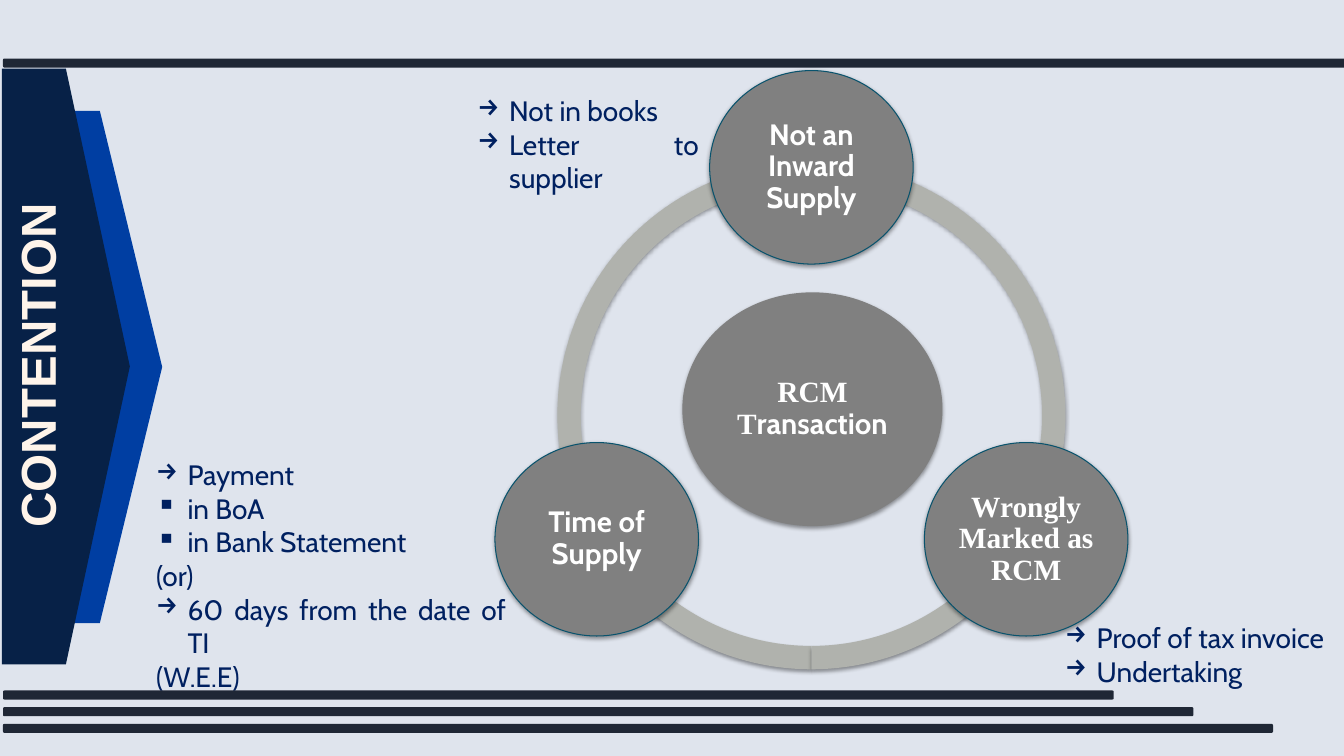
from dataclasses import dataclass
from math import cos, radians, sin

from lxml.etree import SubElement
from pptx import Presentation
from pptx.dml.color import RGBColor as Rgb
from pptx.enum.shapes import MSO_SHAPE as Kind
from pptx.enum.text import MSO_ANCHOR as Anchor, MSO_AUTO_SIZE as Fit, PP_ALIGN as Align
from pptx.oxml.ns import qn
from pptx.shapes.autoshape import Shape
from pptx.shapes.shapetree import GroupShapes, SlideShapes
from pptx.slide import Slide
from pptx.text.text import Font
from pptx.util import Pt


@dataclass(frozen=True)
class Theme:
    back: str = "DFE4ED"
    navy: str = "072147"
    blue: str = "003EA2"
    cream: str = "FEF4EA"
    ring: str = "B0B2AD"
    disc: str = "808080"
    edge: str = "09536D"
    white: str = "FFFFFF"
    ink: str = "002060"
    bar: str = "1F2735"
    sans: str = "Cabin"
    serif: str = "Times New Roman"
    head: str = "Arial"
    title: float = 35
    label: float = 21
    body: float = 20


@dataclass(frozen=True)
class Box:
    left: float
    top: float
    width: float
    height: float


@dataclass(frozen=True)
class Run:
    text: str
    face: str


@dataclass(frozen=True)
class Disc:
    runs: tuple[Run, ...]
    angle: float


@dataclass(frozen=True)
class Line:
    text: str
    mark: str = ""


@dataclass(frozen=True)
class Note:
    box: Box
    lines: tuple[Line, ...]


LOOK = Theme()
MID_X, MID_Y = 579.6, 296.64
RING = 362.9
ORBIT = 177.1
INDENT = 22.5
PAD = 2.1
BAR_X, BAR_H = 2.16, 6.48

HUB = (Run("RCM T", LOOK.serif), Run("ransaction", LOOK.sans))
DISCS = (
    Disc((Run("Not an Inward Supply", LOOK.sans),), -90),
    Disc((Run("Wrongly Marked as RCM", LOOK.serif),), 30),
    Disc((Run("Time of Supply", LOOK.sans),), 150),
)
ARCS = ((90, 162), (18, 90), (162, 18))
NOTES = (
    Note(Box(334.1, 63.4, 172.1, 79.9),
         (Line("Not in books", "→"), Line("Letter to supplier", "→"))),
    Note(Box(753.8, 439.9, 210.2, 55.4),
         (Line("Proof of tax invoice", "→"), Line("Undertaking", "→"))),
    Note(Box(104.4, 323.3, 264.2, 152.6),
         (Line("Payment", "→"), Line("in BoA", "▪"), Line("in Bank Statement", "▪"),
          Line("(or)"), Line("60 days from the date of TI", "→"), Line("(W.E.E)"))),
)
BARS = (
    Box(BAR_X, 41.8, 959.8, BAR_H),
    *(Box(BAR_X, 493.2 + 11.9 * i, 793.4 + 56.9 * i, BAR_H) for i in range(3)),
)


def place(box: Box) -> tuple[Pt, Pt, Pt, Pt]:
    return Pt(box.left), Pt(box.top), Pt(box.width), Pt(box.height)


def around(x: float, y: float, width: float, height: float) -> Box:
    """Return the box centred on a point."""
    return Box(x - width / 2, y - height / 2, width, height)


def style(font: Font, size: float, color: str, bold: bool = False) -> None:
    font.size = Pt(size)
    font.bold = bold
    font.color.rgb = Rgb.from_string(color)


def draw(shapes: SlideShapes | GroupShapes, kind: Kind, box: Box, fill: str) -> Shape:
    """Add a flat shape with no line and no shadow."""
    shape = shapes.add_shape(kind, *place(box))
    shape.shadow.inherit = False
    shape.fill.solid()
    shape.fill.fore_color.rgb = Rgb.from_string(fill)
    shape.line.fill.background()
    return shape


def shade(shape: Shape) -> None:
    """Give the shape a soft shadow straight below it."""
    glow = shape._element.spPr.find(qn("a:effectLst"))
    drop = SubElement(glow, qn("a:outerShdw"), blurRad=str(Pt(3)), dist=str(Pt(1.4)),
                      dir="5400000", rotWithShape="0")
    tint = SubElement(drop, qn("a:srgbClr"), val="000000")
    SubElement(tint, qn("a:alpha"), val="40000")


def draw_disc(shapes: GroupShapes, box: Box, runs: tuple[Run, ...]) -> Shape:
    disc = draw(shapes, Kind.OVAL, box, LOOK.disc)
    shade(disc)
    frame = disc.text_frame
    frame.word_wrap = True
    frame.vertical_anchor = Anchor.MIDDLE
    frame.margin_left = frame.margin_right = Pt(PAD)
    frame.margin_top = frame.margin_bottom = Pt(PAD)
    para = frame.paragraphs[0]
    para.alignment = Align.CENTER
    para.line_spacing = 0.9
    style(para.font, LOOK.label, LOOK.white, True)
    for part in runs:
        run = para.add_run()
        run.text = part.text
        run.font.name = part.face
    return disc


def draw_wheel(slide: Slide) -> None:
    shapes = slide.shapes.add_group_shape().shapes
    for start, end in ARCS:
        arc = draw(shapes, Kind.BLOCK_ARC, around(MID_X, MID_Y, RING, RING), LOOK.ring)
        # Angles are stored in 60000ths of a degree, adjustments in 100000ths.
        arc.adjustments[0] = start * 0.6
        arc.adjustments[1] = end * 0.6
        arc.adjustments[2] = 0.046
        shade(arc)
    draw_disc(shapes, around(MID_X + 0.7, 292.3, 185.8, 167), HUB)
    for item in DISCS:
        turn = radians(item.angle)
        x, y = MID_X + ORBIT * cos(turn), MID_Y + ORBIT * sin(turn)
        disc = draw_disc(shapes, around(x, y, 145.4, 138.2), item.runs)
        disc.line.color.rgb = Rgb.from_string(LOOK.edge)
        disc.line.width = Pt(0.75)


def draw_title(slide: Slide) -> None:
    back = draw(slide.shapes, Kind.PENTAGON, Box(24.5, 79.2, 91.4, 365.8), LOOK.blue)
    back.adjustments[0] = 0.487
    draw(slide.shapes, Kind.PENTAGON, Box(1.4, 49, 91.4, 425.5), LOOK.navy)
    title = slide.shapes.add_textbox(*place(Box(-186.5, 236.2, 425.5, 49.7)))
    title.rotation = 270
    frame = title.text_frame
    frame.word_wrap = True
    frame.auto_size = Fit.SHAPE_TO_FIT_TEXT
    para = frame.paragraphs[0]
    para.text = "CONTENTION"
    para.alignment = Align.CENTER
    para.font.name = LOOK.head
    style(para.font, LOOK.title, LOOK.cream, True)


def draw_note(slide: Slide, note: Note) -> None:
    frame = slide.shapes.add_textbox(*place(note.box)).text_frame
    frame.word_wrap = True
    frame.auto_size = Fit.SHAPE_TO_FIT_TEXT
    for i, line in enumerate(note.lines):
        para = frame.add_paragraph() if i else frame.paragraphs[0]
        para.text = line.text
        para.alignment = Align.JUSTIFY
        if line.mark:
            props = para._p.get_or_add_pPr()
            props.set("marL", str(Pt(INDENT)))
            props.set("indent", str(Pt(-INDENT)))
            SubElement(props, qn("a:buChar"), char=line.mark)
        para.font.name = LOOK.sans
        style(para.font, LOOK.body, LOOK.ink)


def main() -> None:
    deck = Presentation()
    deck.slide_width, deck.slide_height = Pt(960), Pt(540)
    slide = deck.slides.add_slide(deck.slide_layouts[6])
    slide.background.fill.solid()
    slide.background.fill.fore_color.rgb = Rgb.from_string(LOOK.back)
    draw_title(slide)
    draw_wheel(slide)
    for note in NOTES:
        draw_note(slide, note)
    for bar in BARS:
        draw(slide.shapes, Kind.ROUNDED_RECTANGLE, bar, LOOK.bar)
    deck.save("out.pptx")


if __name__ == "__main__":
    main()
